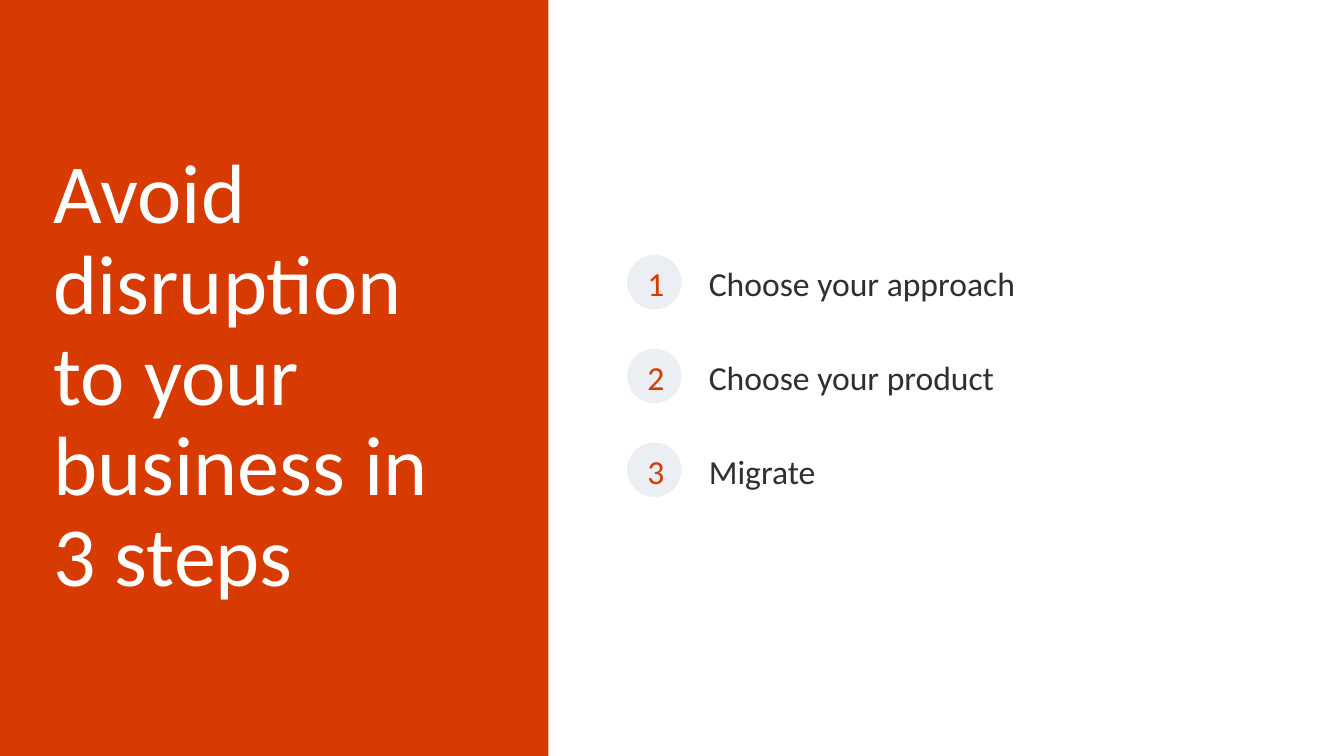
"""Build a title panel beside a numbered list of three steps."""
from pptx import Presentation
from pptx import util as u
from pptx.dml.color import RGBColor
from pptx.enum import shapes, text

ORANGE = RGBColor(0xD8, 0x3B, 0x01)
PALE_GREY = RGBColor(0xEB, 0xEE, 0xF2)
DARK_GREY = RGBColor(0x2F, 0x2F, 0x2F)
WHITE = RGBColor(0xFF, 0xFF, 0xFF)
FONT_NAME = "Calibri"
SLIDE_WIDTH, SLIDE_HEIGHT = 13.33, 7.5
PANEL_WIDTH = 5.44

TITLE = ["Avoid disruption to your business in", "3 steps"]
STEPS = ["Choose your approach", "Choose your product", "Migrate"]


def add_filled_shape(slide, kind, box, color):
    """Add a plain shape without outline or shadow."""
    shape = slide.shapes.add_shape(kind, *map(u.Inches, box))
    shape.shadow.inherit = False
    shape.fill.solid()
    shape.fill.fore_color.rgb = color
    shape.line.fill.background()


def add_text(slide, box, lines, size, color, line_spacing, gap=0,
             anchor=text.MSO_ANCHOR.TOP):
    """Add a wrapped text box with one paragraph per line."""
    frame = slide.shapes.add_textbox(*map(u.Inches, box)).text_frame
    frame_format = {
        "word_wrap": True,
        "vertical_anchor": anchor,
        "margin_left": 0,
        "margin_right": u.Inches(0.1),
        "margin_top": u.Inches(0.05),
        "margin_bottom": u.Inches(0.05),
    }
    for name, value in frame_format.items():
        setattr(frame, name, value)
    for index, line in enumerate(lines):
        paragraph = frame.paragraphs[0] if index == 0 else frame.add_paragraph()
        run = paragraph.add_run()
        run.text = line
        paragraph_format = {
            "line_spacing": line_spacing,
            "space_before": u.Pt(gap if index else 0),
            "space_after": u.Pt(gap),
        }
        for name, value in paragraph_format.items():
            setattr(paragraph, name, value)
        for name, value in {"name": FONT_NAME, "size": u.Pt(size)}.items():
            setattr(run.font, name, value)
        run.font.color.rgb = color


def add_title_panel(slide, left, top, width, height):
    """Draw the coloured panel with the title centred vertically."""
    add_filled_shape(slide, shapes.MSO_SHAPE.RECTANGLE,
                     (left, top, width, height), ORANGE)
    add_text(slide, (left + 0.53, top, width - 1.06, height), TITLE, 60, WHITE,
             0.9, anchor=text.MSO_ANCHOR.MIDDLE)


def add_steps(slide, left, top, width, height):
    """Draw the step discs with their numbers and labels."""
    disc_size, disc_pitch = 0.54, 0.93
    for index in range(len(STEPS)):
        disc_top = top + 0.17 + index * disc_pitch
        add_filled_shape(slide, shapes.MSO_SHAPE.OVAL,
                         (left, disc_top, disc_size, disc_size), PALE_GREY)
    numbers = [str(number) for number in range(1, len(STEPS) + 1)]
    columns = [(0.2, 0.41, numbers, ORANGE),
               (0.81, width - 0.81, STEPS, DARK_GREY)]
    for offset, column_width, lines, color in columns:
        add_text(slide, (left + offset, top, column_width, height), lines, 24,
                 color, 1.5, gap=12)


def main():
    """Create the presentation and save it."""
    presentation = Presentation()
    presentation.slide_width = u.Inches(SLIDE_WIDTH)
    presentation.slide_height = u.Inches(SLIDE_HEIGHT)
    slide = presentation.slides.add_slide(presentation.slide_layouts[6])
    add_title_panel(slide, 0, 0, PANEL_WIDTH, SLIDE_HEIGHT)
    add_steps(slide, 6.22, 2.36, 5.33, 2.85)
    presentation.save("out.pptx")


if __name__ == "__main__":
    main()
